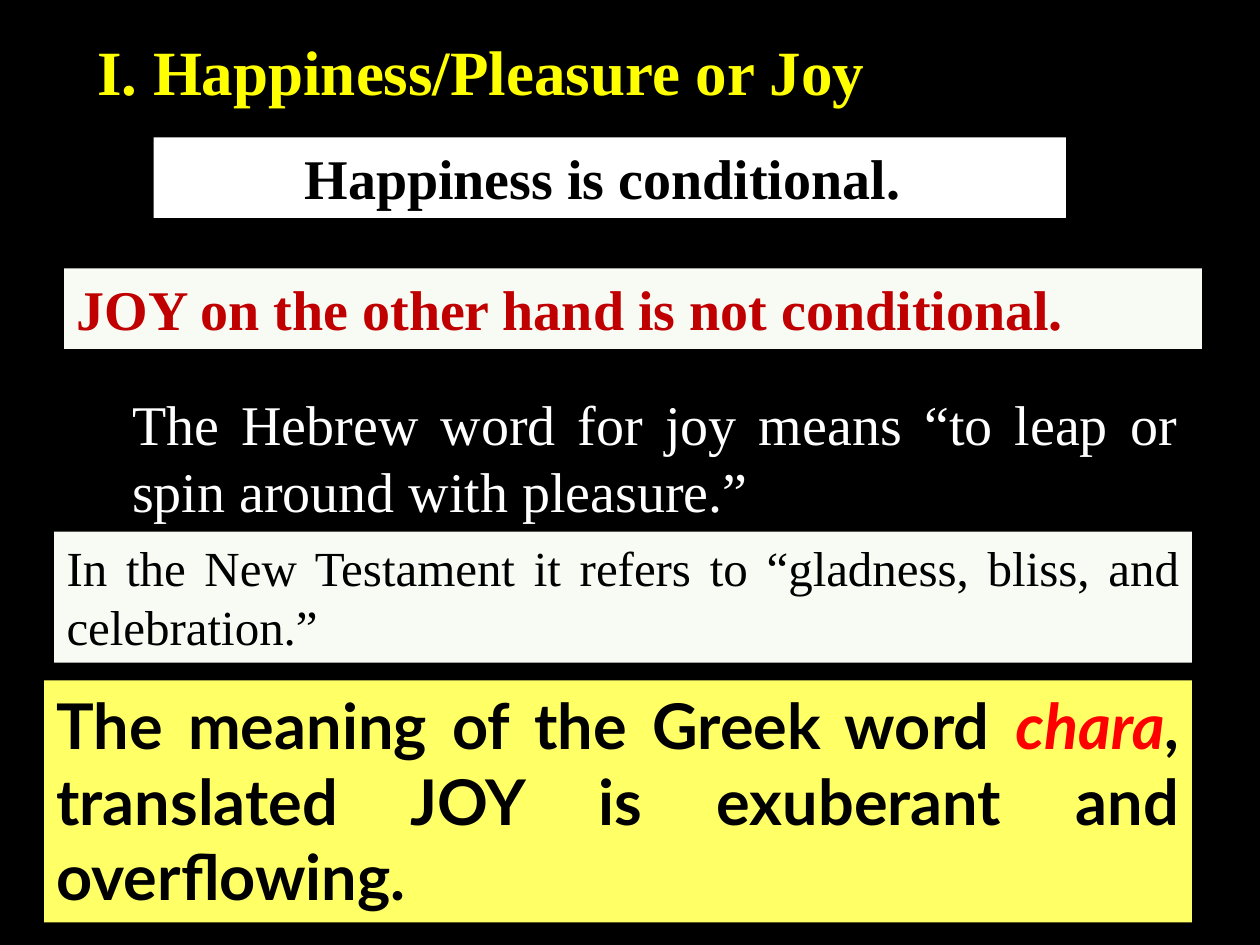
from dataclasses import dataclass

from pptx import Presentation
from pptx.dml.color import RGBColor as Rgb
from pptx.enum.shapes import MSO_SHAPE as Shape
from pptx.enum.text import MSO_ANCHOR as Anchor, MSO_AUTO_SIZE as AutoSize, PP_ALIGN as Align
from pptx.util import Inches, Pt


@dataclass(frozen=True)
class Theme:
    serif: str = "Times New Roman"
    sans: str = "Lato"
    large: int = 36
    medium: int = 32
    small: int = 28
    black: str = "000000"
    white: str = "FFFFFF"
    pale: str = "F8FAF4"
    heading: str = "FFFF00"
    highlight: str = "FFFF66"
    dark_red: str = "C00000"
    red: str = "FF0000"


class SlideBuilder:
    def __init__(self, deck, theme):
        self.theme = theme
        self.page = deck.slides.add_slide(deck.slide_layouts[5])
        fill = self.page.background.fill
        fill.solid()
        fill.fore_color.rgb = Rgb.from_string(theme.black)

    def set_text(self, box, spans, size, color, font=None, bold=False, align=Align.LEFT):
        """Fill a box with one paragraph; each span is (text, accent color or None)."""
        frame = box.text_frame
        frame.word_wrap = True
        frame.auto_size = AutoSize.SHAPE_TO_FIT_TEXT
        frame.vertical_anchor = Anchor.TOP
        para = frame.paragraphs[0]
        para.alignment = align
        for text, accent in spans:
            span = para.add_run()
            span.text = text
            span.font.name = font or self.theme.serif
            span.font.size = Pt(size)
            span.font.bold = bold
            span.font.italic = accent is not None
            span.font.color.rgb = Rgb.from_string(accent or color)

    def title(self, place, text):
        box = self.page.shapes.title
        box.left, box.top, box.width, box.height = map(Inches, place)
        self.set_text(box, [(text, None)], self.theme.large, self.theme.heading, bold=True)

    def text(self, place, text, size, color, **style):
        box = self.page.shapes.add_textbox(*map(Inches, place))
        self.set_text(box, [(text, None)], size, color, **style)

    def panel(self, place, fill, spans, size, color, **style):
        box = self.page.shapes.add_shape(Shape.RECTANGLE, *map(Inches, place))
        box.shadow.inherit = False
        box.fill.solid()
        box.fill.fore_color.rgb = Rgb.from_string(fill)
        box.line.fill.background()
        self.set_text(box, spans, size, color, **style)


def main():
    deck = Presentation()
    deck.slide_width, deck.slide_height = Inches(10), Inches(7.5)
    theme = Theme()
    slide = SlideBuilder(deck, theme)

    # Heading
    slide.title((0.67, 0.21, 8.43, 0.71), "I. Happiness/Pleasure or Joy")

    # Happiness against joy
    slide.panel((1.22, 1.09, 7.24, 0.64), theme.white,
                [("Happiness is conditional. ", None)],
                theme.medium, theme.black, bold=True, align=Align.CENTER)
    slide.panel((0.51, 2.13, 9.03, 0.64), theme.pale,
                [("JOY on the other hand is not conditional.", None)],
                theme.medium, theme.dark_red, bold=True)

    # Meanings in the New Testament and in Hebrew
    slide.panel((0.43, 4.22, 9.03, 1.04), theme.pale,
                [("In the New Testament it refers to “gladness, bliss, and celebration.”", None)],
                theme.small, theme.black, align=Align.JUSTIFY)
    slide.text((0.95, 3.04, 8.5, 1.18),
               "The Hebrew word for joy means “to leap or spin around with pleasure.”",
               theme.medium, theme.white, align=Align.JUSTIFY)

    # Greek meaning with the accented word
    slide.panel((0.35, 5.4, 9.11, 1.92), theme.highlight,
                [("The meaning of the Greek word ", None),
                 ("chara", theme.red),
                 (", translated JOY is exuberant and overflowing.", None)],
                theme.large, theme.black, font=theme.sans, bold=True, align=Align.JUSTIFY)

    deck.save("out.pptx")


if __name__ == "__main__":
    main()
